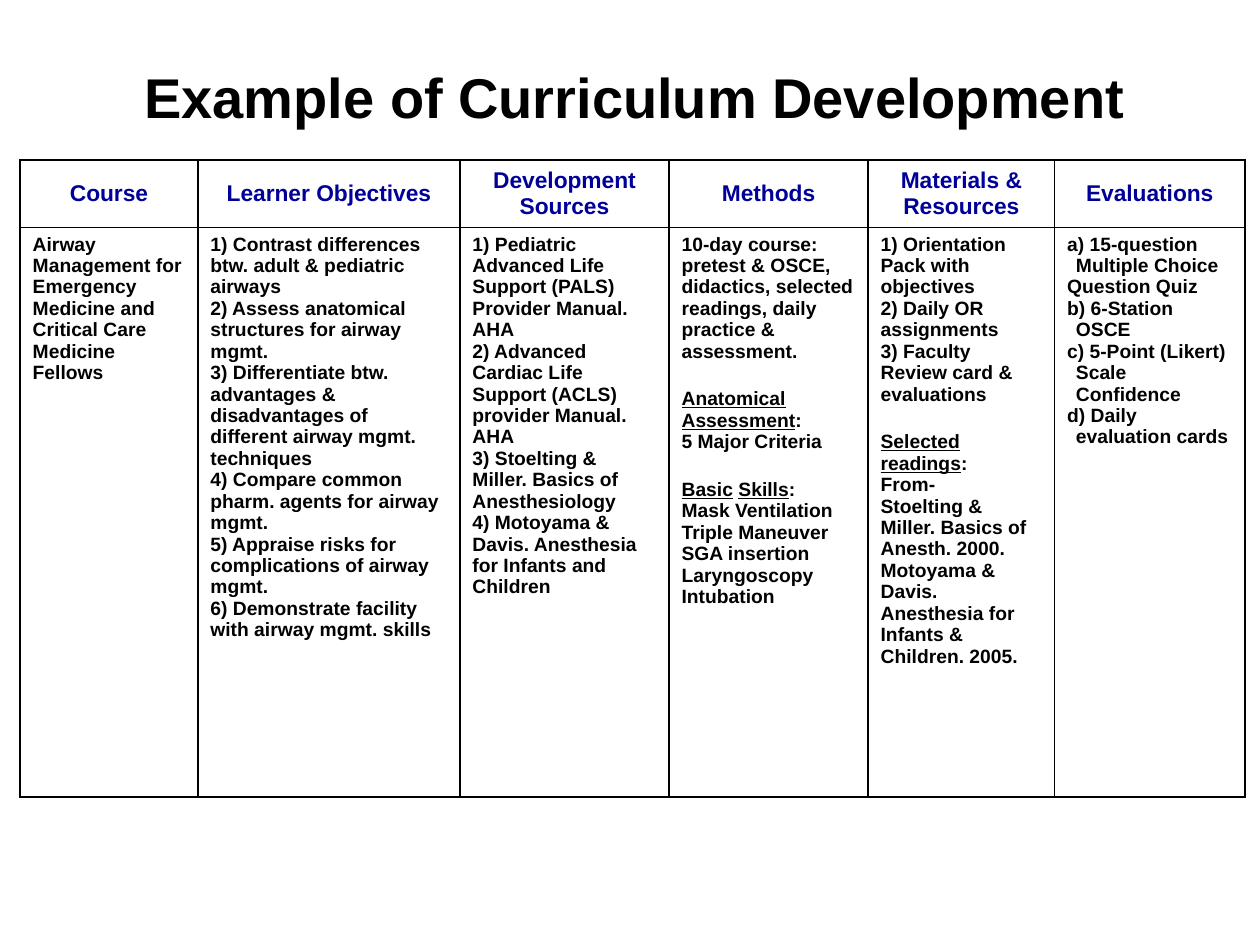
from pptx import Presentation, util as u
from pptx.dml.color import RGBColor
from pptx.enum import text as t
from pptx.oxml import parse_xml
from pptx.oxml.ns import nsdecls

COLORS = {"ink": "000000", "head": "000099"}
SIDES = ("L", "R", "T", "B")


def write(frame, lines, size, color="ink", align=t.PP_ALIGN.LEFT, hang=0):
    """Fill a frame: _..._ underlines, a leading > opens a gap above."""
    frame.word_wrap = True
    for i, line in enumerate(lines):
        para = frame.paragraphs[0] if i == 0 else frame.add_paragraph()
        para.alignment = align
        if line.startswith(">"):
            para.space_before = u.Pt(15)
        if hang:
            props = para._p.get_or_add_pPr()
            props.set("marL", str(u.Inches(hang)))
            props.set("indent", str(-u.Inches(hang)))
        for j, part in enumerate(line.lstrip(">").split("_")):
            if part:
                run = para.add_run()
                run.text = part
                font = run.font
                font.name, font.size, font.bold = "Arial", u.Pt(size), True
                font.underline = j % 2 == 1
                font.color.rgb = RGBColor.from_string(COLORS[color])


def frame_cell(cell):
    """Draw a thin black line on each side of a cell."""
    props = cell._tc.get_or_add_tcPr()
    for i, side in enumerate(SIDES):
        props.insert(i, parse_xml(
            f'<a:ln{side} {nsdecls("a")} w="{u.Pt(1)}"><a:solidFill>'
            f'<a:srgbClr val="{COLORS["ink"]}"/></a:solidFill></a:ln{side}>'))


# Column: heading, width, hanging indent, lines
COLS = [
    ("Course", 1.41, 0, [
        "Airway Management for Emergency Medicine and Critical Care Medicine Fellows"]),
    ("Learner Objectives", 2.08, 0, [
        "1) Contrast differences btw. adult & pediatric airways",
        "2) Assess anatomical structures for airway mgmt.",
        "3) Differentiate btw. advantages & disadvantages of different airway mgmt. techniques",
        "4) Compare common pharm. agents for airway mgmt.",
        "5) Appraise risks for complications of airway mgmt.",
        "6) Demonstrate facility with airway mgmt. skills"]),
    ("Development Sources", 1.66, 0, [
        "1) Pediatric Advanced Life Support (PALS) Provider Manual. AHA",
        "2) Advanced Cardiac Life Support (ACLS) provider Manual. AHA",
        "3) Stoelting & Miller. Basics of Anesthesiology",
        "4) Motoyama & Davis. Anesthesia for Infants and Children"]),
    ("Methods", 1.58, 0, [
        "10-day course: pretest & OSCE, didactics, selected readings, "
        "daily practice & assessment.",
        ">_Anatomical_ _Assessment_:",
        "5 Major Criteria",
        ">_Basic_ _Skills_:",
        "Mask Ventilation Triple Maneuver",
        "SGA insertion Laryngoscopy Intubation"]),
    ("Materials & Resources", 1.48, 0, [
        "1) Orientation Pack with objectives",
        "2) Daily OR assignments",
        "3) Faculty Review card & evaluations",
        ">_Selected readings_:",
        "From-",
        "Stoelting & Miller. Basics of Anesth. 2000.",
        "Motoyama & Davis. Anesthesia for Infants & Children. 2005."]),
    ("Evaluations", 1.51, 0.07, [
        "a) 15-question Multiple Choice",
        "Question Quiz",
        "b) 6-Station OSCE",
        "c) 5-Point (Likert) Scale Confidence",
        "d) Daily evaluation cards"]),
]
ROWS = (0.51, 4.52)

deck = Presentation()
deck.slide_width, deck.slide_height = u.Inches(10), u.Inches(7.5)
slide = deck.slides.add_slide(deck.slide_layouts[6])

# Title
box = slide.shapes.add_textbox(u.Inches(0.54), u.Inches(0.4), u.Inches(9), u.Inches(0.73))
box.text_frame.vertical_anchor = t.MSO_ANCHOR.MIDDLE
write(box.text_frame, ["Example of Curriculum Development"], 32, align=t.PP_ALIGN.CENTER)

# Table grid
wide = sum(col[1] for col in COLS)
grid = slide.shapes.add_table(
    len(ROWS), len(COLS), u.Inches(0.16), u.Inches(1.27),
    u.Inches(wide), u.Inches(sum(ROWS))).table
grid.first_row = grid.horz_banding = False
for row, high in zip(grid.rows, ROWS):
    row.height = u.Inches(high)

# Headings and contents
for i, (head, width, hang, lines) in enumerate(COLS):
    grid.columns[i].width = u.Inches(width)
    top, body = grid.cell(0, i), grid.cell(1, i)
    for cell in (top, body):
        cell.fill.background()
        frame_cell(cell)
    top.vertical_anchor = t.MSO_ANCHOR.MIDDLE
    write(top.text_frame, [head], 13, color="head", align=t.PP_ALIGN.CENTER)
    write(body.text_frame, lines, 11, hang=hang)

deck.save("out.pptx")
